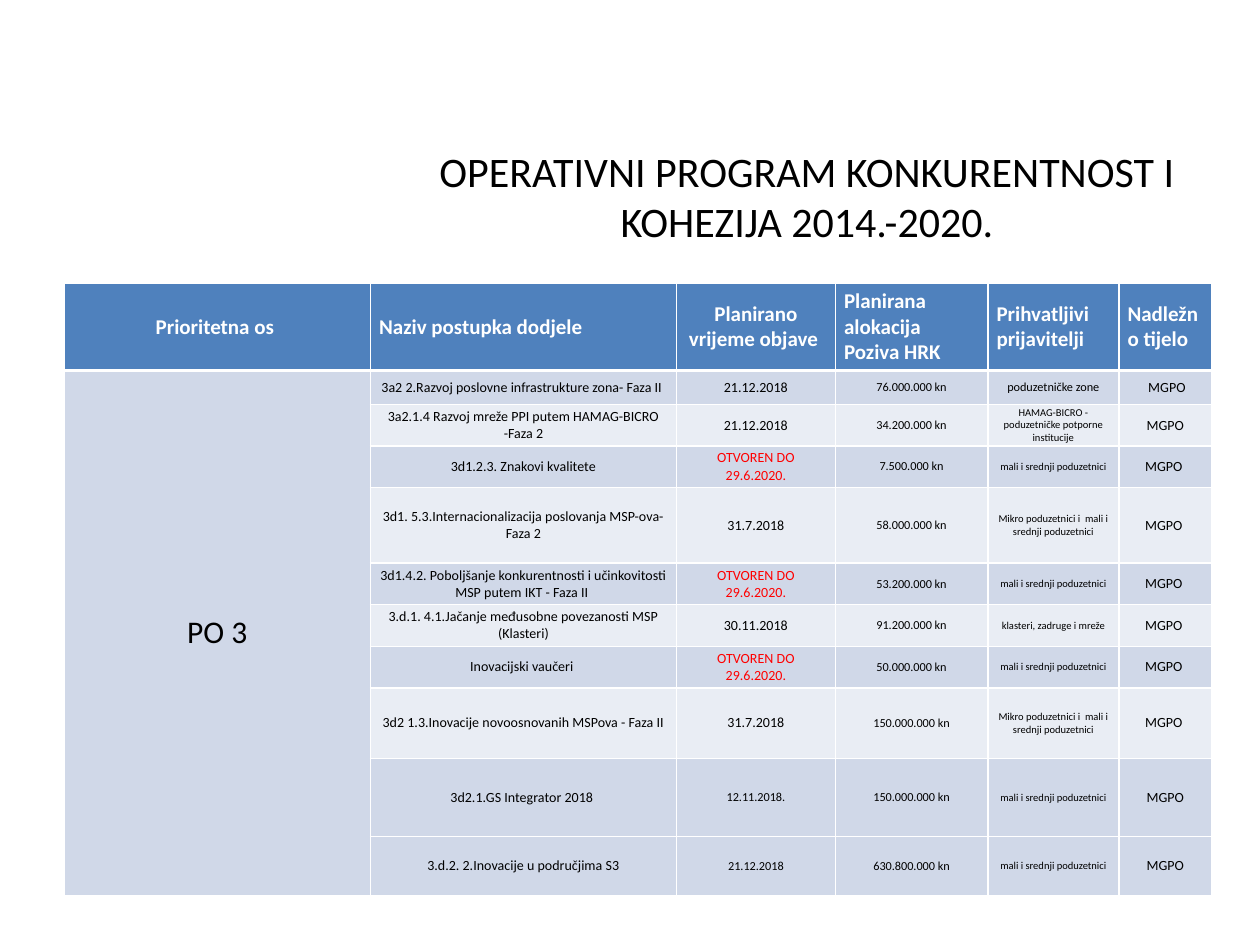
from typing import NamedTuple

import pptx
import pptx.dml.color
import pptx.enum.text
import pptx.oxml.ns
import pptx.util
from lxml import etree

Inches = pptx.util.Inches
Pt = pptx.util.Pt
qn = pptx.oxml.ns.qn
ALIGN = pptx.enum.text.PP_ALIGN
MIDDLE = pptx.enum.text.MSO_ANCHOR.MIDDLE

FONT = "Calibri"
BLACK, WHITE, RED = "000000", "FFFFFF", "FF0000"
HEADER_FILL = "4F81BD"
BAND_FILLS = ("D0D8E8", "E9EDF4")
COLUMN_WIDTHS = (2.43, 2.43, 1.26, 1.21, 1.04, 0.74, 0.03)
ROW_HEIGHTS = (0.69, 0.27, 0.33, 0.33, 0.6, 0.33, 0.33, 0.33, 0.56, 0.31, 0.31, 0.47)
SPACER = len(COLUMN_WIDTHS) - 1
SMALL_FIRMS = "mali i srednji poduzetnici"
MICRO_FIRMS = "Mikro poduzetnici i  mali i srednji poduzetnici"
OPEN_CALL = "OTVOREN DO 29.6.2020."


class Heading(NamedTuple):
    text: str
    align: ALIGN = ALIGN.LEFT


class Call(NamedTuple):
    row: int
    name: str
    date: str
    amount: str
    applicants: str
    body: str = "MGPO "
    date_size: float = 8
    applicants_size: float = 6
    rows: int = 1


HEADINGS = (
    Heading("Prioritetna os ", ALIGN.CENTER),
    Heading("Naziv postupka dodjele"),
    Heading("Planirano vrijeme objave ", ALIGN.CENTER),
    Heading("Planirana alokacija Poziva HRK"),
    Heading("Prihvatljivi prijavitelji"),
    Heading("Nadležno tijelo"),
)

CALLS = (
    Call(1, "3a2 2.Razvoj poslovne infrastrukture zona- Faza II ", "21.12.2018",
         "76.000.000 kn", "poduzetničke zone", " MGPO", applicants_size=7),
    Call(2, "3a2.1.4 Razvoj mreže PPI putem HAMAG-BICRO -Faza 2", "21.12.2018",
         "34.200.000 kn", "HAMAG-BICRO - poduzetničke potporne institucije", "MGPO"),
    Call(3, "3d1.2.3. Znakovi kvalitete", OPEN_CALL, "7.500.000 kn", SMALL_FIRMS),
    Call(4, "3d1. 5.3.Internacionalizacija poslovanja MSP-ova- Faza 2", "31.7.2018",
         "58.000.000 kn", MICRO_FIRMS),
    Call(5, "3d1.4.2. Poboljšanje konkurentnosti i učinkovitosti MSP putem IKT - Faza II ",
         OPEN_CALL, "53.200.000 kn", SMALL_FIRMS),
    Call(6, "3.d.1. 4.1.Jačanje međusobne povezanosti MSP (Klasteri)", "30.11.2018",
         "91.200.000 kn", "klasteri, zadruge i mreže"),
    Call(7, "Inovacijski vaučeri ", OPEN_CALL, "50.000.000 kn", SMALL_FIRMS),
    Call(8, "3d2 1.3.Inovacije novoosnovanih MSPova - Faza II", "31.7.2018",
         "150.000.000 kn", MICRO_FIRMS),
    Call(9, "3d2.1.GS Integrator 2018 ", "12.11.2018.", "150.000.000 kn", SMALL_FIRMS,
         " MGPO ", date_size=7, rows=2),
    Call(11, "3.d.2. 2.Inovacije u područjima S3", "21.12.2018", "630.800.000 kn",
         SMALL_FIRMS, " MGPO ", date_size=7),
)


def rgb(color: str) -> pptx.dml.color.RGBColor:
    return pptx.dml.color.RGBColor.from_string(color)


def write(frame, text: str, *, size: float, color: str = BLACK, bold: bool = False,
          align: ALIGN = ALIGN.CENTER) -> None:
    para = frame.paragraphs[0]
    para.alignment = align
    span = para.add_run()
    span.text = text
    span.font.name = FONT
    span.font.size = Pt(size)
    span.font.bold = bold
    span.font.color.rgb = rgb(color)


def add_border(cell, side: str, width: float) -> None:
    line = etree.SubElement(cell._tc.get_or_add_tcPr(), qn(f"a:ln{side}"),
                            w=str(Pt(width)))
    fill = etree.SubElement(line, qn("a:solidFill"))
    etree.SubElement(fill, qn("a:srgbClr"), val=WHITE)


def prepare_cell(cell, row: int, column: int) -> None:
    """Set margins, white borders and a fill that follows the row."""
    spacer = column == SPACER
    cell.margin_left = cell.margin_right = Inches(0 if spacer else 0.07)
    cell.margin_top = cell.margin_bottom = 0
    cell.vertical_anchor = MIDDLE
    widths = {"L": 1} if spacer else {
        "L": 1, "R": 1, "T": 1.5 if row == 1 else 1, "B": 1.5 if row == 0 else 1}
    for side, width in widths.items():
        add_border(cell, side, width)
    if spacer:
        cell.fill.background()
        return
    cell.fill.solid()
    if row == 0:
        color = HEADER_FILL
    elif column == 0 or row == 10:
        color = BAND_FILLS[0]
    else:
        color = BAND_FILLS[(row - 1) % 2]
    cell.fill.fore_color.rgb = rgb(color)


def fill_call(table, call: Call) -> None:
    date_color = RED if call.date == OPEN_CALL else BLACK
    entries = (
        (call.name, 8, BLACK),
        (call.date, call.date_size, date_color),
        (call.amount, 7, BLACK),
        (call.applicants, call.applicants_size, BLACK),
        (call.body, 8, BLACK),
    )
    for column, (text, size, color) in enumerate(entries, start=1):
        cell = table.cell(call.row, column)
        if call.rows > 1:
            cell.merge(table.cell(call.row + call.rows - 1, column))
        write(cell.text_frame, text, size=size, color=color)


def add_calls_table(page) -> None:
    table = page.shapes.add_table(
        len(ROW_HEIGHTS), len(COLUMN_WIDTHS), Inches(0.51), Inches(2.25),
        Inches(sum(COLUMN_WIDTHS)), Inches(sum(ROW_HEIGHTS))).table
    table.horz_banding = False
    for column, width in zip(table.columns, COLUMN_WIDTHS):
        column.width = Inches(width)
    for row, height in enumerate(ROW_HEIGHTS):
        table.rows[row].height = Inches(height)
        for column in range(len(COLUMN_WIDTHS)):
            prepare_cell(table.cell(row, column), row, column)

    for column, heading in enumerate(HEADINGS):
        write(table.cell(0, column).text_frame, heading.text, size=12, color=WHITE,
              bold=True, align=heading.align)
    axis = table.cell(1, 0)
    axis.merge(table.cell(len(ROW_HEIGHTS) - 1, 0))
    write(axis.text_frame, "PO 3", size=18)
    for call in CALLS:
        fill_call(table, call)

    # Small type in empty cells keeps them from stretching their rows
    for cell in table.iter_cells():
        if not cell.text:
            etree.SubElement(cell.text_frame.paragraphs[0]._p, qn("a:endParaRPr"), sz="600")


def main() -> None:
    deck = pptx.Presentation()
    deck.slide_width, deck.slide_height = Inches(10), Inches(7.5)
    page = deck.slides.add_slide(deck.slide_layouts[5])
    title = page.shapes.title
    title.left, title.top = Inches(2.81), Inches(0.93)
    title.width, title.height = Inches(7.19), Inches(1.25)
    title.text_frame.vertical_anchor = MIDDLE
    write(title.text_frame, "OPERATIVNI PROGRAM KONKURENTNOST I KOHEZIJA 2014.-2020.", size=24)
    add_calls_table(page)
    deck.save("out.pptx")


if __name__ == "__main__":
    main()
